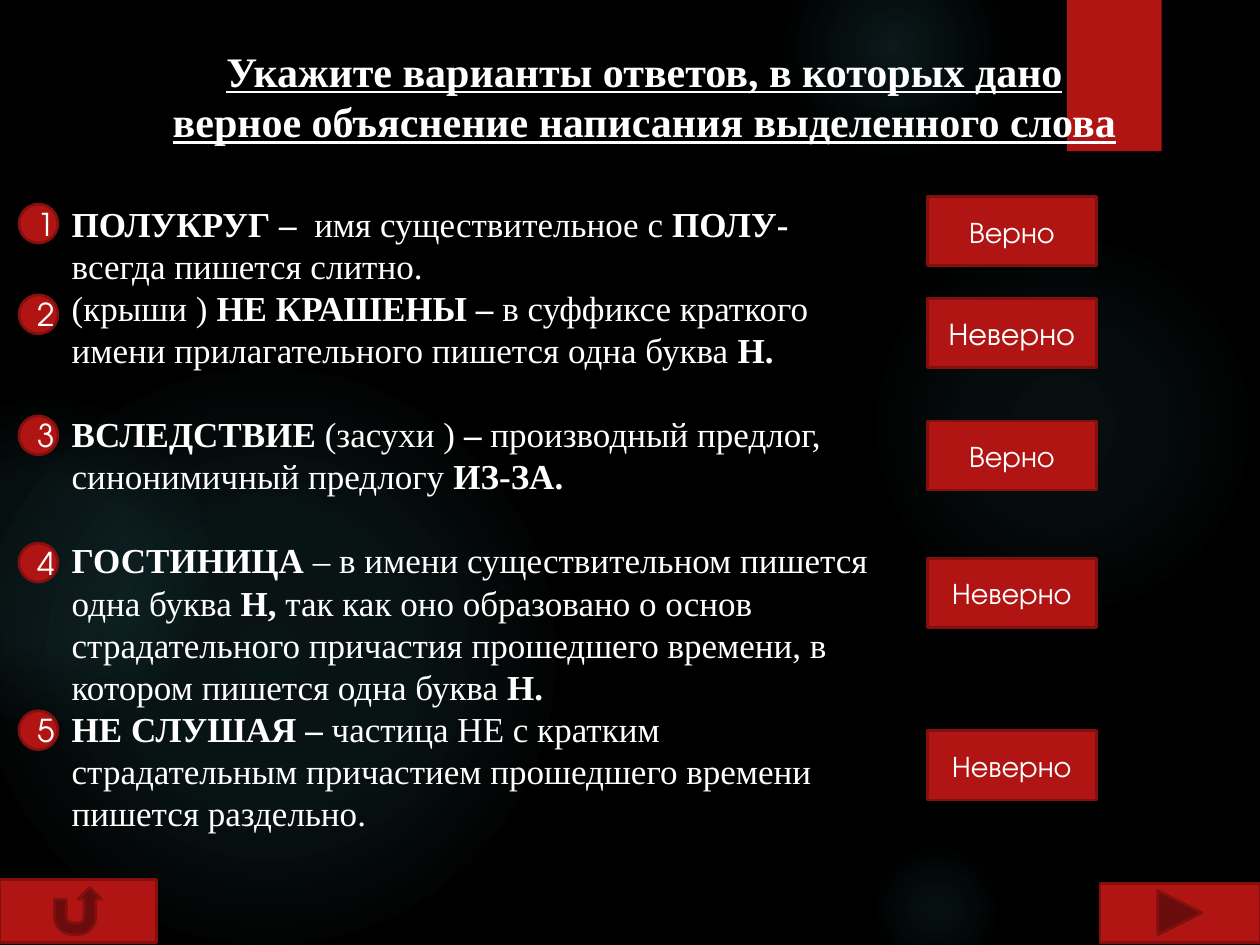
from dataclasses import dataclass

from pptx import Presentation
from pptx.dml.color import RGBColor
from pptx.enum.shapes import MSO_SHAPE
from pptx.enum.text import MSO_ANCHOR, MSO_AUTO_SIZE, PP_ALIGN
from pptx.oxml import parse_xml
from pptx.oxml.ns import nsdecls, qn
from pptx.util import Pt

OVAL, RECTANGLE = MSO_SHAPE.OVAL, MSO_SHAPE.RECTANGLE
FORWARD = MSO_SHAPE.ACTION_BUTTON_FORWARD_OR_NEXT
RETURN = MSO_SHAPE.ACTION_BUTTON_RETURN
CENTER, LEFT = PP_ALIGN.CENTER, PP_ALIGN.LEFT

BLACK = RGBColor(0x00, 0x00, 0x00)
WHITE = RGBColor(0xFF, 0xFF, 0xFF)
RED = RGBColor(0xB0, 0x15, 0x13)
DARK_RED = RGBColor(0x82, 0x10, 0x0E)
TEAL = RGBColor(0x50, 0xB9, 0xC1)

SERIF, SANS = "Times New Roman", "TeX Gyre Adventor"
BODY_SIZE = 20
BLANK_LINE = 24


@dataclass(frozen=True)
class Box:
    left: float
    top: float
    width: float
    height: float

    def lengths(self):
        return [Pt(value) for value in (self.left, self.top, self.width, self.height)]


@dataclass(frozen=True)
class Glow:
    """A round light; stops are (position, opacity) in percent."""
    left: float
    top: float
    size: float
    stops: tuple


@dataclass(frozen=True)
class Statement:
    """One answer; bold words stand between asterisks."""
    text: str
    badge_top: float
    button_top: float
    verdict: str
    verdict_size: float = 17
    space_before: float = 0


TITLE = "Укажите варианты ответов, в которых дано верное объяснение написания выделенного слова"
TITLE_BOX = Box(84.2, 22.3, 568.1, 65.5)
BODY_BOX = Box(33.8, 112.3, 473.8, 370.8)
RIBBON = Box(609.8, 0, 54, 86.4)
NAVIGATION = (
    (FORWARD, Box(628.6, 504.7, 91.4, 33.8)),
    (RETURN, Box(0, 502.6, 89.3, 36)),
)
GLOWS = (
    Glow(496, 131.8, 221.8, ((0, 7), (36, 6), (69, 0))),
    Glow(447.8, -36, 126, ((0, 14), (36, 7), (73, 0))),
    Glow(496, 480.2, 77.8, ((0, 9), (36, 5), (66, 0))),
    Glow(-12.2, 210.2, 329.8, ((0, 11), (36, 10), (75, 0))),
    Glow(-66.2, 228.2, 185.8, ((0, 8), (36, 8), (72, 0))),
)
STATEMENTS = (
    Statement("*ПОЛУКРУГ –  *имя существительное с *ПОЛУ-* всегда пишется слитно.",
              116.6, 112.3, "Верно"),
    Statement("(крыши ) *НЕ КРАШЕНЫ – *в суффиксе краткого имени прилагательного "
              "пишется одна буква *Н.*", 168.5, 170.6, "Неверно", 18),
    Statement("*ВСЛЕДСТВИЕ *(засухи ) *– *производный предлог, синонимичный предлогу *ИЗ-ЗА.*",
              237.6, 240.5, "Верно", space_before=BLANK_LINE),
    Statement("*ГОСТИНИЦА *– в имени существительном пишется одна буква *Н, *так как оно "
              "образовано о основ страдательного причастия прошедшего времени, в котором "
              "пишется одна буква *Н.*", 310.3, 319, "Неверно", space_before=BLANK_LINE),
    Statement("*НЕ СЛУШАЯ – *частица НЕ с кратким страдательным причастием прошедшего "
              "времени пишется раздельно.", 406.1, 417.6, "Неверно"),
)


def apply(target, formats: dict) -> None:
    for name, value in formats.items():
        setattr(target, name, value)


def add_run(paragraph, text: str, size: float, font: str, **formats) -> None:
    run = paragraph.add_run()
    run.text = text
    apply(run.font, {"size": Pt(size), "name": font, **formats})
    run.font.color.rgb = WHITE


def add_panel(slide, kind, box: Box, outlined: bool = True):
    shape = slide.shapes.add_shape(kind, *box.lengths())
    shape.shadow.inherit = False
    shape.fill.solid()
    shape.fill.fore_color.rgb = RED
    if outlined:
        shape.line.color.rgb = DARK_RED
        shape.line.width = Pt(1.5)
    else:
        shape.line.fill.background()
    return shape


def add_label(slide, kind, box: Box, text: str, size: float) -> None:
    frame = add_panel(slide, kind, box).text_frame
    frame.vertical_anchor = MSO_ANCHOR.MIDDLE
    paragraph = frame.paragraphs[0]
    paragraph.alignment = CENTER
    add_run(paragraph, text, size, SANS)


def add_glow(slide, glow: Glow) -> None:
    shape = add_panel(slide, OVAL, Box(glow.left, glow.top, glow.size, glow.size), False)
    stops = "".join(
        f'<a:gs pos="{position * 1000}"><a:srgbClr val="{TEAL}">'
        f'<a:alpha val="{opacity * 1000}"/></a:srgbClr></a:gs>'
        for position, opacity in glow.stops)
    gradient = parse_xml(
        f'<a:gradFill {nsdecls("a")} rotWithShape="1"><a:gsLst>{stops}</a:gsLst>'
        '<a:path path="circle"><a:fillToRect l="50000" t="50000" r="50000" b="50000"/>'
        '</a:path></a:gradFill>')
    properties = shape.element.spPr
    properties.replace(properties.find(qn("a:solidFill")), gradient)


def prepare_placeholder(slide, placeholder, box: Box):
    """Place the placeholder in front of the background shapes."""
    slide.shapes.element.append(placeholder.element)
    apply(placeholder, dict(zip(("left", "top", "width", "height"), box.lengths())))
    frame = placeholder.text_frame
    apply(frame, {"word_wrap": True, "auto_size": MSO_AUTO_SIZE.NONE,
                  "vertical_anchor": MSO_ANCHOR.TOP})
    return frame


def fill_title(slide) -> None:
    paragraph = prepare_placeholder(slide, slide.shapes.title, TITLE_BOX).paragraphs[0]
    paragraph.alignment = CENTER
    add_run(paragraph, TITLE, 24, SERIF, bold=True, underline=True)


def fill_body(slide) -> None:
    frame = prepare_placeholder(slide, slide.placeholders[1], BODY_BOX)
    for index, statement in enumerate(STATEMENTS):
        paragraph = frame.add_paragraph() if index else frame.paragraphs[0]
        apply(paragraph, {"alignment": LEFT, "space_before": Pt(statement.space_before)})
        properties = paragraph._p.get_or_add_pPr()
        properties.set("marL", "0")
        properties.set("indent", "0")
        properties.append(parse_xml(f'<a:buNone {nsdecls("a")}/>'))
        for part, text in enumerate(statement.text.split("*")):
            if text:
                add_run(paragraph, text, BODY_SIZE, SERIF, bold=part % 2 == 1)


def main() -> None:
    presentation = Presentation()
    apply(presentation, {"slide_width": Pt(720), "slide_height": Pt(540)})
    slide = presentation.slides.add_slide(presentation.slide_layouts[1])
    slide.background.fill.solid()
    slide.background.fill.fore_color.rgb = BLACK

    for glow in GLOWS:
        add_glow(slide, glow)
    add_panel(slide, RECTANGLE, RIBBON, outlined=False)
    fill_title(slide)
    fill_body(slide)
    for number, statement in enumerate(STATEMENTS, start=1):
        add_label(slide, OVAL, Box(10.8, statement.badge_top, 22.3, 22.3), str(number), 18)
        add_label(slide, RECTANGLE, Box(530, statement.button_top, 96.5, 39.6),
                  statement.verdict, statement.verdict_size)
    for kind, box in NAVIGATION:
        add_panel(slide, kind, box)
    presentation.save("out.pptx")


if __name__ == "__main__":
    main()
